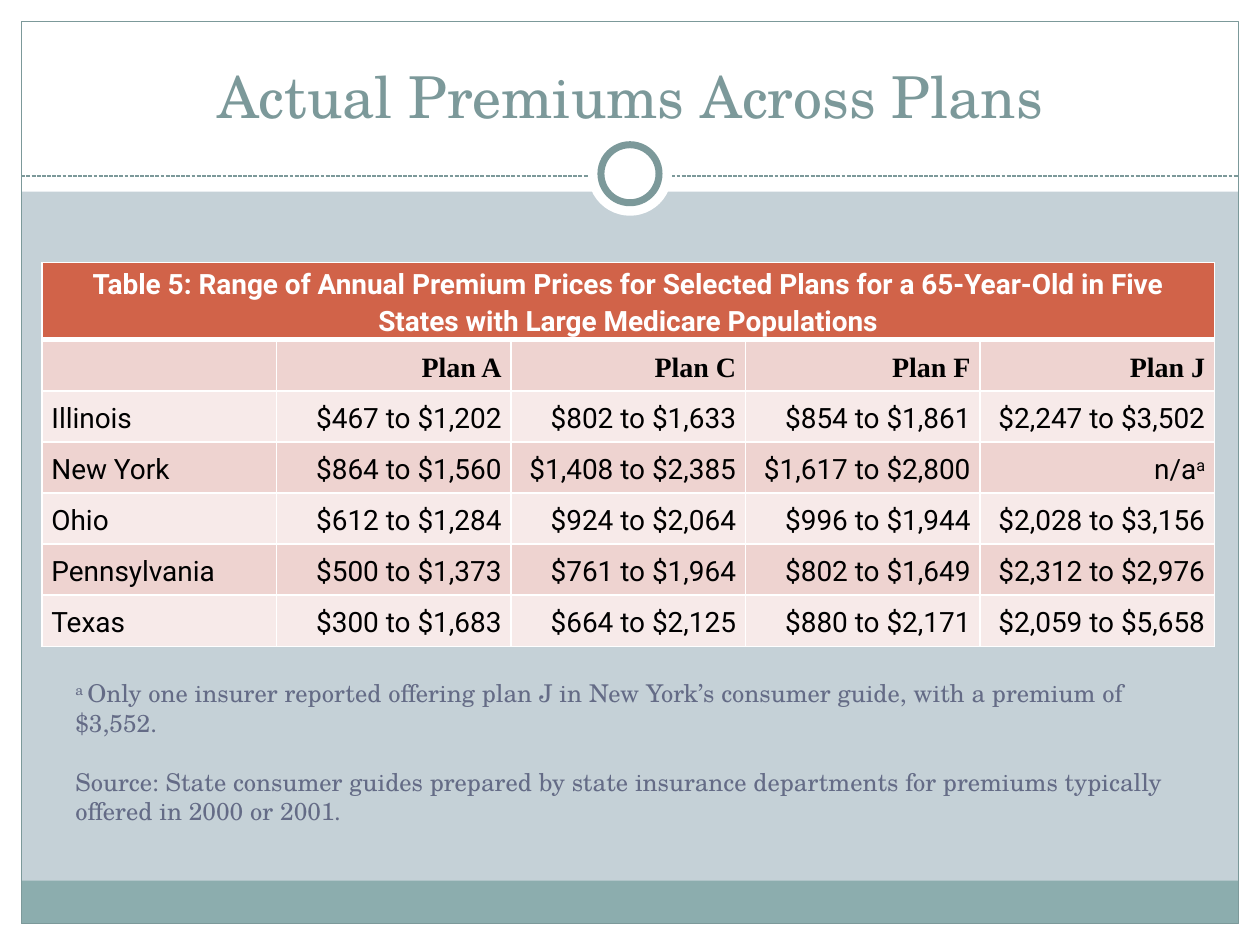
import pptx
import pptx.dml.color
import pptx.enum.dml
import pptx.enum.shapes
import pptx.enum.text
import pptx.oxml.ns
import pptx.util
from lxml import etree

Pt = pptx.util.Pt
ALIGN = pptx.enum.text.PP_ALIGN
ANCHOR = pptx.enum.text.MSO_ANCHOR
SHAPE = pptx.enum.shapes.MSO_SHAPE
qn = pptx.oxml.ns.qn

SERIF, SANS = "TeX Gyre Schola", "Roboto"
WHITE, TEAL = "FFFFFF", "7C999A"
HEADING_FILL, DARK_BAND, LIGHT_BAND = "D16349", "EED3D0", "F7EAE9"
SLIDE_WIDTH, SLIDE_HEIGHT, MARGIN = 720, 540, 12.2
HEADER_HEIGHT, ROW_HEIGHT, COLUMN_WIDTH = 43.2, 29.2, 134

TABLE_TITLE = ("Table 5: Range of Annual Premium Prices for Selected Plans "
               "for a 65-Year-Old in Five States with Large Medicare Populations")
PREMIUMS = [
    ["", "Plan A", "Plan C", "Plan F", "Plan J"],
    ["Illinois", "$467 to $1,202", "$802 to $1,633", "$854 to $1,861", "$2,247 to $3,502"],
    ["New York", "$864 to $1,560", "$1,408 to $2,385", "$1,617 to $2,800", "n/a^a"],
    ["Ohio", "$612 to $1,284", "$924 to $2,064", "$996 to $1,944", "$2,028 to $3,156"],
    ["Pennsylvania", "$500 to $1,373", "$761 to $1,964", "$802 to $1,649", "$2,312 to $2,976"],
    ["Texas", "$300 to $1,683", "$664 to $2,125", "$880 to $2,171", "$2,059 to $5,658"],
]
FOOTNOTE = ("Only one insurer reported offering plan J in New York’s consumer guide, "
            "with a premium of $3,552.")
SOURCE = ("Source: State consumer guides prepared by state insurance departments "
          "for premiums typically offered in 2000 or 2001.")


def rgb(value):
    return pptx.dml.color.RGBColor.from_string(value)


def set_fill(target, color):
    target.fill.solid()
    target.fill.fore_color.rgb = rgb(color)


def set_font(paragraph, name, size, color, bold=False):
    font = paragraph.font
    font.name, font.size, font.bold = name, Pt(size), bold
    font.color.rgb = rgb(color)


def add_superscript(paragraph, text):
    run = paragraph.add_run()
    run.text = text
    run.font._element.set("baseline", "30000")


def add_shape(slide, kind, left, top, width, height, fill=None, line=None, line_width=0.75):
    shape = slide.shapes.add_shape(kind, Pt(left), Pt(top), Pt(width), Pt(height))
    shape.shadow.inherit = False
    if fill:
        set_fill(shape, fill)
    else:
        shape.fill.background()
    if line:
        shape.line.color.rgb = rgb(line)
        shape.line.width = Pt(line_width)
    else:
        shape.line.fill.background()


def add_dashed_line(slide, left, right, y):
    line = slide.shapes.add_connector(
        pptx.enum.shapes.MSO_CONNECTOR.STRAIGHT, Pt(left), Pt(y), Pt(right), Pt(y))
    line.line.color.rgb = rgb(TEAL)
    line.line.width = Pt(0.75)
    line.line.dash_style = pptx.enum.dml.MSO_LINE.SQUARE_DOT
    etree.SubElement(line._element.spPr, qn("a:effectLst"))


def add_text_frame(slide, left, top, width, height):
    frame = slide.shapes.add_textbox(Pt(left), Pt(top), Pt(width), Pt(height)).text_frame
    frame.word_wrap = True
    return frame


def add_frame(slide):
    """Draw the white margins, the outline, the bottom band and the ring."""
    right = SLIDE_WIDTH - MARGIN
    bottom = SLIDE_HEIGHT - MARGIN
    inner_width = SLIDE_WIDTH - 2 * MARGIN
    for box in [(0, bottom, SLIDE_WIDTH, MARGIN), (0, 0, SLIDE_WIDTH, 109.5),
                (0, 0, MARGIN, SLIDE_HEIGHT), (right, 0, MARGIN, SLIDE_HEIGHT)]:
        add_shape(slide, SHAPE.RECTANGLE, *box, fill=WHITE)
    add_shape(slide, SHAPE.RECTANGLE, MARGIN, 503.3, inner_width, 24.5, fill="8CADAE")
    add_shape(slide, SHAPE.RECTANGLE, MARGIN, MARGIN, inner_width,
              SLIDE_HEIGHT - 2 * MARGIN, line=TEAL)
    add_dashed_line(slide, MARGIN, right, 100.6)
    add_shape(slide, SHAPE.OVAL, 336, 75.3, 48, 48, fill=WHITE)
    add_shape(slide, SHAPE.OVAL, 343.4, 82.7, 33.2, 33.2, WHITE, TEAL, 4)


def add_title(slide):
    frame = add_text_frame(slide, 24, 18, 672, 60)
    frame.vertical_anchor = ANCHOR.BOTTOM
    paragraph = frame.paragraphs[0]
    paragraph.text = "Actual Premiums Across Plans"
    paragraph.alignment = ALIGN.CENTER
    set_font(paragraph, SERIF, 33, TEAL)


def set_borders(cell, top=1, bottom=1):
    properties = cell._tc.get_or_add_tcPr()
    widths = {"a:lnL": 1, "a:lnR": 1, "a:lnT": top, "a:lnB": bottom}
    for position, (tag, width) in enumerate(widths.items()):
        border = etree.Element(qn(tag), w=str(Pt(width)))
        fill = etree.SubElement(border, qn("a:solidFill"))
        etree.SubElement(fill, qn("a:srgbClr"), val=WHITE)
        properties.insert(position, border)


def fill_cell(cell, text, fill, alignment, font_name=SANS, color="000000", bold=False):
    """Write a cell; text after ^ is raised."""
    set_fill(cell, fill)
    cell.margin_left = cell.margin_right = Pt(5.4)
    cell.margin_top = cell.margin_bottom = 0
    cell.vertical_anchor = ANCHOR.MIDDLE
    paragraph = cell.text_frame.paragraphs[0]
    paragraph.alignment = alignment
    paragraph.line_spacing = 1.15
    paragraph.space_before = paragraph.space_after = Pt(3)
    set_font(paragraph, font_name, 16, color, bold)
    base, _, raised = text.partition("^")
    if base:
        paragraph.add_run().text = base
    if raised:
        add_superscript(paragraph, raised)


def add_premium_table(slide):
    row_count, column_count = len(PREMIUMS) + 1, len(PREMIUMS[0])
    height = HEADER_HEIGHT + ROW_HEIGHT * len(PREMIUMS)
    table = slide.shapes.add_table(row_count, column_count, Pt(24), Pt(150),
                                   Pt(COLUMN_WIDTH * column_count), Pt(height)).table
    for column in table.columns:
        column.width = Pt(COLUMN_WIDTH)
    for index, row in enumerate(table.rows):
        row.height = Pt(ROW_HEIGHT if index else HEADER_HEIGHT)
    table.cell(0, 0).merge(table.cell(0, column_count - 1))
    fill_cell(table.cell(0, 0), TABLE_TITLE, HEADING_FILL, ALIGN.CENTER, color=WHITE, bold=True)
    for cell in table.rows[0].cells:
        set_borders(cell, bottom=3)
    for row_index, values in enumerate(PREMIUMS, start=1):
        is_heading = row_index == 1
        for column_index, text in enumerate(values):
            cell = table.cell(row_index, column_index)
            fill_cell(cell, text, DARK_BAND if row_index % 2 else LIGHT_BAND,
                      ALIGN.RIGHT if column_index else ALIGN.LEFT,
                      "Times New Roman" if is_heading else SANS, bold=is_heading)
            set_borders(cell, top=3 if is_heading else 1)


def add_notes(slide):
    frame = add_text_frame(slide, 36, 384, 654, 94)
    footnote, source = frame.paragraphs[0], frame.add_paragraph()
    add_superscript(footnote, "a ")
    footnote.add_run().text = FOOTNOTE
    source.text = SOURCE
    source.space_before = Pt(17)
    for paragraph in (footnote, source):
        set_font(paragraph, SERIF, 14, "646B86")


def main():
    presentation = pptx.Presentation()
    presentation.slide_width, presentation.slide_height = Pt(SLIDE_WIDTH), Pt(SLIDE_HEIGHT)
    slide = presentation.slides.add_slide(presentation.slide_layouts[6])
    set_fill(slide.background, "C5D1D7")
    add_frame(slide)
    add_title(slide)
    add_premium_table(slide)
    add_notes(slide)
    presentation.save("out.pptx")


if __name__ == "__main__":
    main()
